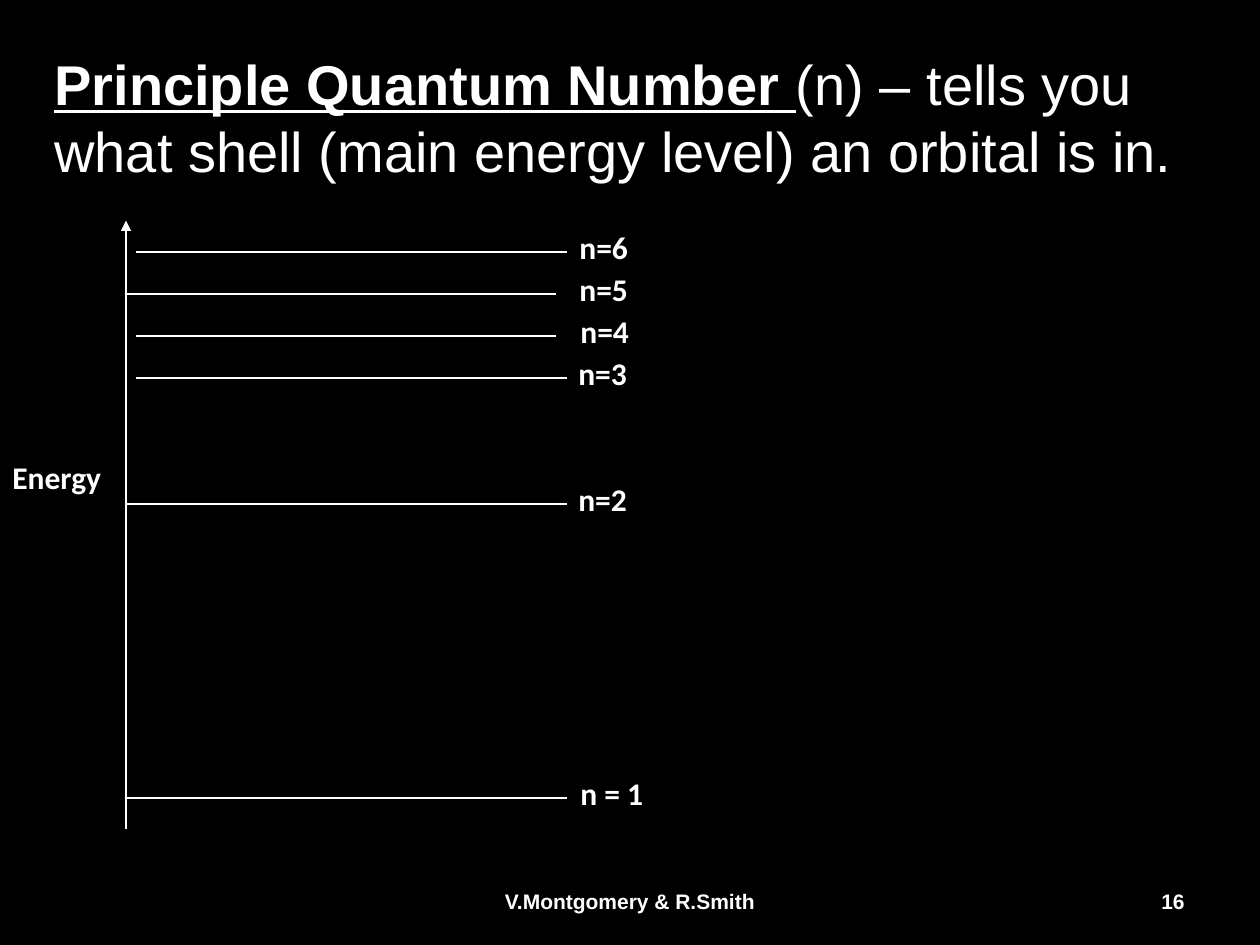
from dataclasses import dataclass

from lxml import etree
from pptx import Presentation
from pptx.dml.color import RGBColor
from pptx.enum.shapes import MSO_CONNECTOR
from pptx.enum.text import MSO_ANCHOR, MSO_AUTO_SIZE, PP_ALIGN
from pptx.oxml.ns import qn
from pptx.util import Inches, Pt

BLACK = RGBColor(0x00, 0x00, 0x00)
WHITE = RGBColor(0xFF, 0xFF, 0xFF)
STRAIGHT = MSO_CONNECTOR.STRAIGHT
TOP, MIDDLE = MSO_ANCHOR.TOP, MSO_ANCHOR.MIDDLE
LEFT, CENTER, RIGHT = PP_ALIGN.LEFT, PP_ALIGN.CENTER, PP_ALIGN.RIGHT
FIT_SHAPE = MSO_AUTO_SIZE.SHAPE_TO_FIT_TEXT

# The slide is a grid of 120 columns by 90 rows
CELL = Inches(1) // 12
AXIS_COLUMN = 12
LABEL_RISE = 2.85
LABEL_HEIGHT = 4.8


@dataclass(frozen=True)
class Level:
    label: str
    row: float
    start: float = AXIS_COLUMN
    end: float = 54
    label_column: float = 54
    label_width: float = 7.1


LEVELS = (
    Level("n = 1", 76, label_column=54.1, label_width=8.5),
    Level("n=2", 48, label_column=53.9),
    Level("n=3", 36, start=13, label_column=53.9),
    Level("n=4", 32, start=13, end=53, label_column=54.1),
    Level("n=5", 28, end=53),
    Level("n=6", 24, start=13),
)


def cells(count: float) -> int:
    return round(count * CELL)


def add_text(slide, text: str, column: float, row: float, width: float,
             height: float, *, size: float = 18, font: str = "Calibri",
             bold: bool = True, underline: bool = False, plain_tail: str = "",
             align=LEFT, anchor=TOP, wrap: bool = False) -> None:
    """Add a text box; plain_tail follows the text without bold or underline."""
    box = slide.shapes.add_textbox(
        cells(column), cells(row), cells(width), cells(height))
    frame = box.text_frame
    frame.word_wrap = wrap
    frame.vertical_anchor = anchor
    if not wrap:
        frame.auto_size = FIT_SHAPE
    paragraph = frame.paragraphs[0]
    paragraph.alignment = align
    for words, is_bold, is_underlined in (
            (text, bold, underline), (plain_tail, False, False)):
        if not words:
            continue
        run = paragraph.add_run()
        run.text = words
        run.font.name = font
        run.font.size = Pt(size)
        run.font.bold = is_bold
        run.font.underline = is_underlined
        run.font.color.rgb = WHITE


def add_line(slide, start: tuple[float, float], end: tuple[float, float],
             arrow: bool = False) -> None:
    connector = slide.shapes.add_connector(
        STRAIGHT, *(cells(value) for value in (*start, *end)))
    connector.line.color.rgb = WHITE
    connector.line.width = Pt(0.75)
    if arrow:
        etree.SubElement(connector.line._get_or_add_ln(),
                         qn("a:tailEnd"), type="triangle")
    etree.SubElement(connector._element.spPr, qn("a:effectLst"))


def add_level(slide, level: Level) -> None:
    add_line(slide, (level.start, level.row), (level.end, level.row))
    add_text(slide, level.label, level.label_column, level.row - LABEL_RISE,
             level.label_width, LABEL_HEIGHT)


def main() -> None:
    presentation = Presentation()
    presentation.slide_width = cells(120)
    presentation.slide_height = cells(90)
    slide = presentation.slides.add_slide(presentation.slide_layouts[6])
    slide.background.fill.solid()
    slide.background.fill.fore_color.rgb = BLACK

    # Heading
    add_text(slide, "Principle Quantum Number ", 4, 3.6, 110, 15,
             plain_tail="(n) – tells you what shell (main energy level) "
                        "an orbital is in.",
             size=32, font="Arial", underline=True, anchor=MIDDLE, wrap=True)

    # Energy axis and levels
    add_line(slide, (AXIS_COLUMN, 79), (AXIS_COLUMN, 21), arrow=True)
    for level in LEVELS:
        add_level(slide, level)
    add_text(slide, "Energy", 0, 43, 10.9, LABEL_HEIGHT)

    # Footer and slide number
    for text, column, width, align in (
            ("V.Montgomery & R.Smith", 41, 38, CENTER), ("16", 86, 28, RIGHT)):
        add_text(slide, text, column, 83.4, width, 4.8, size=12, font="Arial",
                 align=align, anchor=MIDDLE, wrap=True)

    presentation.save("out.pptx")


if __name__ == "__main__":
    main()
